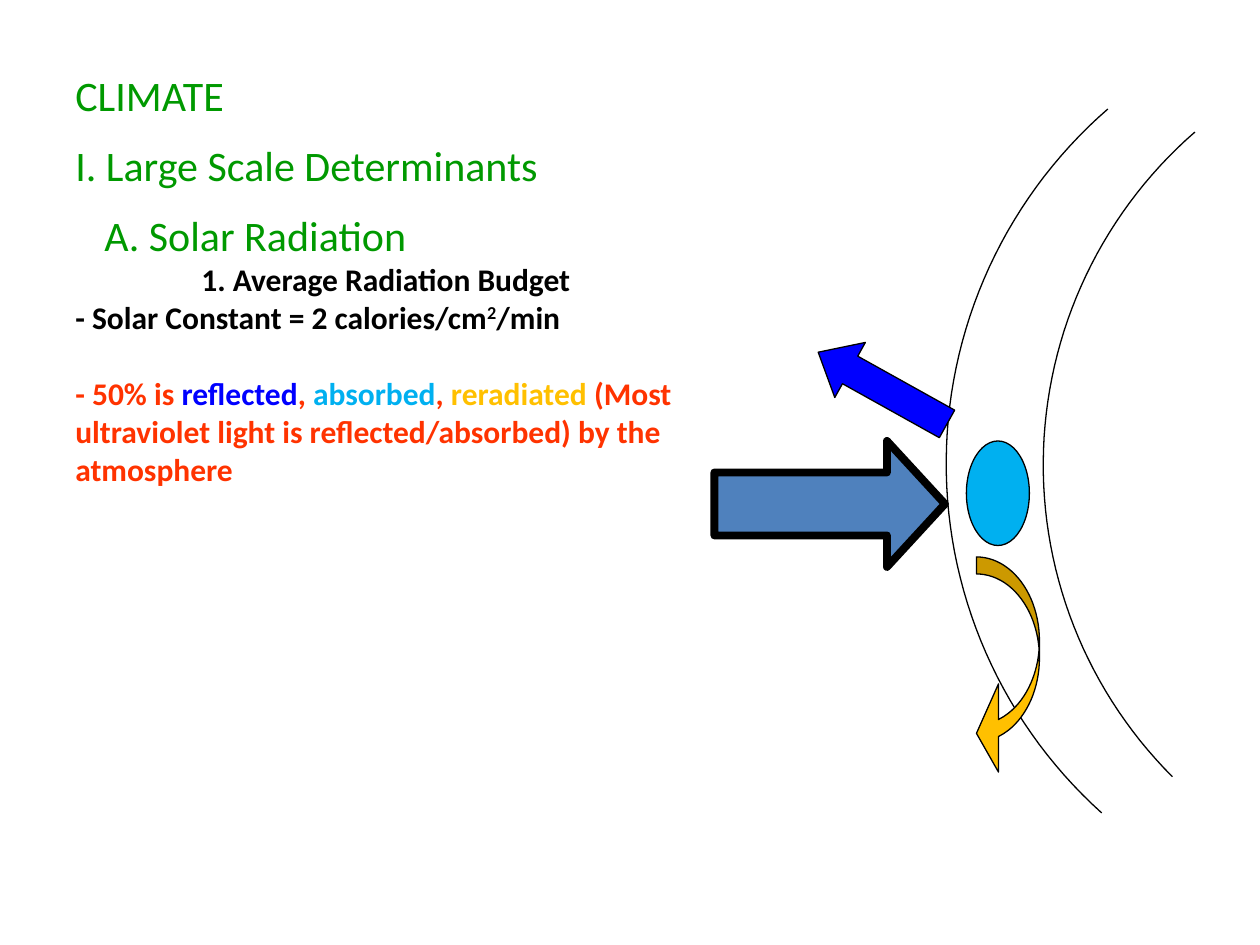
import math

import pptx
import pptx.dml.color
import pptx.enum.shapes
import pptx.util

Inches = pptx.util.Inches
Pt = pptx.util.Pt
SHAPE = pptx.enum.shapes.MSO_SHAPE

GREEN, BLACK, RED = "009900", "000000", "FF3300"
BLUE, SKY, AMBER, STEEL = "0000FF", "00B0F0", "FFC000", "4F81BD"

HEADING = {"size": Pt(24), "bold": False}
DETAIL = {"size": Pt(18), "bold": True}
HEADING_GAP = Pt(11.3)
DETAIL_GAP = Pt(22)


def color(value):
    return pptx.dml.color.RGBColor.from_string(value)


class ClimatePage:
    """Holds the font and the page that elements are added to."""

    font = "Calibri"

    def __init__(self, page):
        self.page = page

    def text_box(self, left, top, width, height):
        box = self.page.shapes.add_textbox(
            Inches(left), Inches(top), Inches(width), Inches(height))
        box.text_frame.word_wrap = True
        return box.text_frame

    def paragraph(self, para, spans, style, gap=0, indent=0):
        """Fill para with (text, colour, baseline) spans."""
        para.space_before = gap
        if indent:
            properties = para._p.get_or_add_pPr()
            properties.set("marL", str(Inches(indent)))
            properties.set("indent", "0")
        for text, hue, baseline in spans:
            span = para.add_run()
            span.text = text
            for name, value in {"name": self.font, **style}.items():
                setattr(span.font, name, value)
            span.font.color.rgb = color(hue)
            if baseline:
                span.font._element.set("baseline", str(baseline))

    def outline(self, shape, weight):
        shape.shadow.inherit = False
        shape.line.color.rgb = color(BLACK)
        shape.line.width = Pt(weight)

    def shape(self, kind, left, top, width, height, fill,
              weight=0.75, rotation=0, adjustments=()):
        shape = self.page.shapes.add_shape(
            kind, Inches(left), Inches(top), Inches(width), Inches(height))
        for index, value in enumerate(adjustments):
            shape.adjustments[index] = value
        shape.rotation = rotation
        shape.fill.solid()
        shape.fill.fore_color.rgb = color(fill)
        self.outline(shape, weight)

    def arc(self, center_x, center_y, radius, start, end, steps=60):
        """Draw an open circular arc between two angles in degrees."""
        points = []
        for step in range(steps + 1):
            angle = math.radians(start + (end - start) * step / steps)
            points.append((Inches(center_x + radius * math.cos(angle)),
                           Inches(center_y + radius * math.sin(angle))))
        builder = self.page.shapes.build_freeform(*points[0])
        builder.add_line_segments(points[1:], close=False)
        curve = builder.convert_to_shape()
        curve.fill.background()
        self.outline(curve, 0.75)


def main():
    deck = pptx.Presentation()
    deck.slide_width, deck.slide_height = Inches(10), Inches(7.5)
    climate = ClimatePage(deck.slides.add_slide(deck.slide_layouts[6]))

    paragraphs = [
        ([("CLIMATE", GREEN, 0)], HEADING, HEADING_GAP, 0),
        ([("I. Large Scale Determinants", GREEN, 0)], HEADING, HEADING_GAP, 0),
        ([("A. Solar Radiation", GREEN, 0)], HEADING, HEADING_GAP, 0.23),
        ([("1. Average Radiation Budget", BLACK, 0)], DETAIL, 0, 1),
        ([("- Solar Constant = 2 calories/cm", BLACK, 0), ("2", BLACK, 30000),
          ("/min", BLACK, 0)], DETAIL, 0, 0),
        ([("- 50% is ", RED, 0), ("reflected", BLUE, 0), (", ", RED, 0),
          ("absorbed", SKY, 0), (", ", RED, 0), ("reradiated", AMBER, 0),
          (" (Most ultraviolet light is reflected/absorbed) by the atmosphere",
           RED, 0)], DETAIL, DETAIL_GAP, 0),
    ]
    frame = climate.text_box(0.5, 0.5, 5.5, 5.65)
    for index, (spans, style, gap, indent) in enumerate(paragraphs):
        para = frame.add_paragraph() if index else frame.paragraphs[0]
        climate.paragraph(para, spans, style, gap, indent)

    # Earth's surface, then the top of the atmosphere
    climate.arc(11.78, 3.69, 3.5, 229, 135)
    climate.arc(11.24, 3.68, 3.73, 229, 132)

    # Incoming, reradiated, absorbed and reflected light
    climate.shape(SHAPE.RIGHT_ARROW, 5.67, 3.5, 1.83, 1, STEEL,
                  weight=4.5, adjustments=(0.5, 0.46))
    climate.shape(SHAPE.CURVED_LEFT_ARROW, 7.75, 4.42, 0.5, 1.75, AMBER,
                  adjustments=(0.27, 1.4, 0.35))
    climate.shape(SHAPE.OVAL, 7.67, 3.5, 0.5, 0.83, SKY)
    climate.shape(SHAPE.LEFT_ARROW, 6.42, 2.83, 1.17, 0.5, BLUE,
                  rotation=29.1, adjustments=(0.5, 0.58))

    deck.save("out.pptx")


if __name__ == "__main__":
    main()
